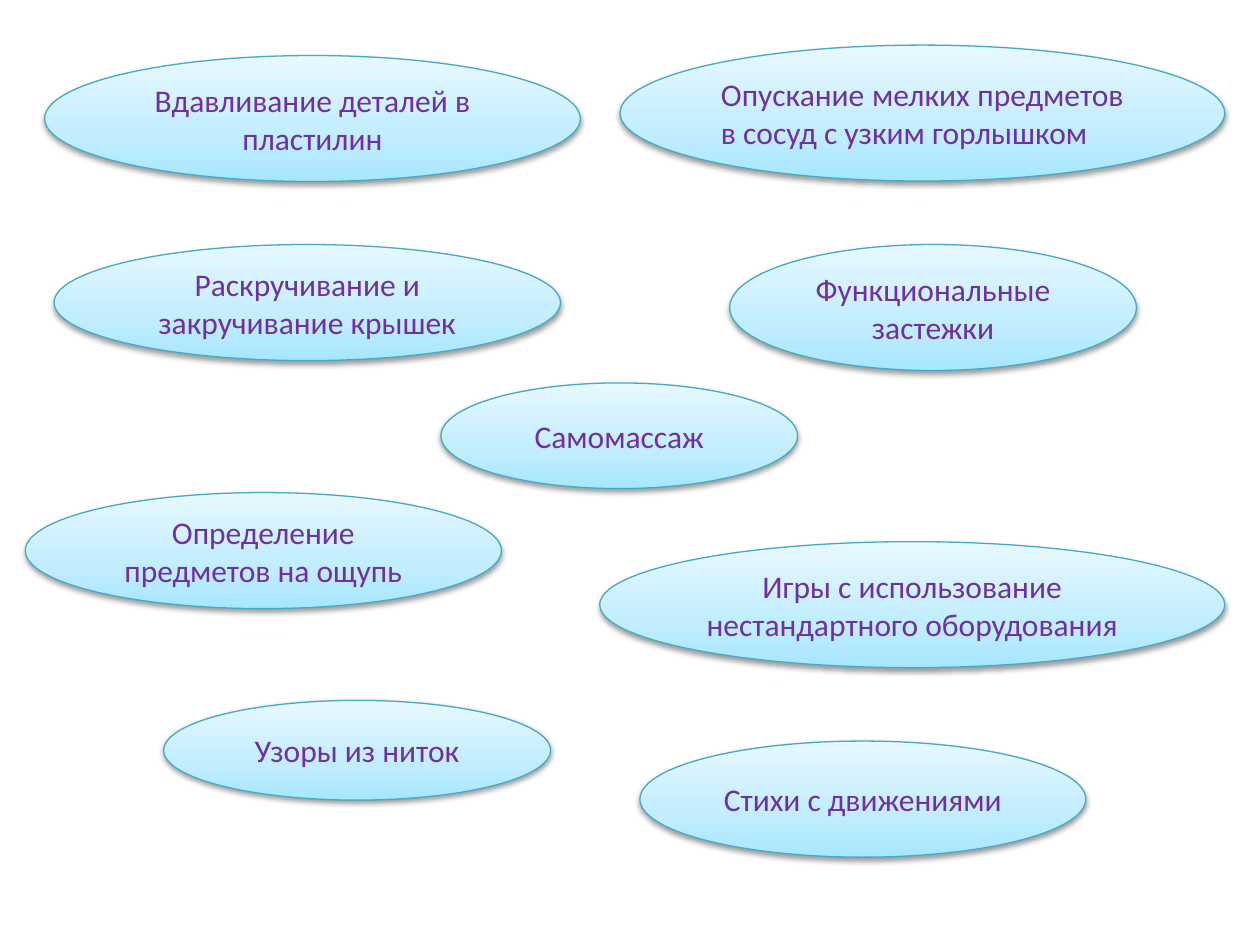
from lxml import etree
from pptx import Presentation
from pptx.dml.color import RGBColor
from pptx.enum.shapes import MSO_SHAPE
from pptx.enum.text import MSO_ANCHOR, PP_ALIGN
from pptx.oxml.ns import qn
from pptx.util import Cm, Pt

OVAL = MSO_SHAPE.OVAL
MIDDLE = MSO_ANCHOR.MIDDLE
CENTER, JUSTIFY = PP_ALIGN.CENTER, PP_ALIGN.JUSTIFY

COLORS = {"text": "7030A0", "line": "46AAC5", "shadow": "000000",
          "deep": "A7E6FF", "mid": "C1EDFF", "pale": "E7F8FF"}
GRADIENT = [(0, "deep"), (35, "mid"), (100, "pale")]

# Activity, box (left, top, width, height in cm), alignment
ACTIVITIES = [
    ("Вдавливание деталей в пластилин", (0.9, 1.12, 10.8, 2.54), CENTER),
    ("Опускание мелких предметов в сосуд с узким горлышком",
     (12.5, 0.91, 12.19, 2.74), JUSTIFY),
    ("Раскручивание и закручивание крышек", (1.09, 4.93, 10.21, 2.34), CENTER),
    ("Функциональные застежки", (14.71, 4.93, 8.2, 2.54), CENTER),
    ("Самомассаж", (8.89, 7.72, 7.19, 2.13), CENTER),
    ("Узоры из ниток", (3.3, 14.12, 7.8, 2.01), CENTER),
    ("Стихи с движениями", (12.9, 14.94, 8.99, 2.34), CENTER),
    ("Определение предметов на ощупь", (0.51, 9.93, 9.6, 2.34), CENTER),
    ("Игры с использование нестандартного оборудования",
     (12.09, 10.92, 12.6, 2.54), CENTER),
]


def rgb(name):
    return RGBColor.from_string(COLORS[name])


def add_color(parent, name):
    return etree.SubElement(parent, qn("a:srgbClr"), val=COLORS[name])


def fill_gradient(s):
    """Three-stop gradient running from the bottom upwards."""
    s.fill.gradient()
    s.fill.gradient_angle = 90
    stops = s.element.spPr.find(".//" + qn("a:gsLst"))
    for stop in list(stops):
        stops.remove(stop)
    for percent, name in GRADIENT:
        add_color(etree.SubElement(stops, qn("a:gs"), pos=str(percent * 1000)), name)


def add_shadow(s):
    """Soft shadow falling straight down."""
    s.shadow.inherit = False
    effects = s.element.spPr.find(qn("a:effectLst"))
    shadow = etree.SubElement(effects, qn("a:outerShdw"), blurRad="40000",
                              dist="20000", dir="5400000", rotWithShape="0")
    etree.SubElement(add_color(shadow, "shadow"), qn("a:alpha"), val="38000")


def add_activity(slide, text, box, align):
    s = slide.shapes.add_shape(OVAL, *map(Cm, box))
    fill_gradient(s)
    s.line.color.rgb = rgb("line")
    s.line.width = Pt(0.75)
    add_shadow(s)

    # Label
    tf = s.text_frame
    tf.word_wrap = True
    tf.vertical_anchor = MIDDLE
    p = tf.paragraphs[0]
    p.text = text
    p.alignment = align
    p.font.name = "Calibri"
    p.font.size = Pt(18)
    p.font.color.rgb = rgb("text")


def main():
    prs = Presentation()
    prs.slide_width, prs.slide_height = Cm(25.4), Cm(19.05)
    slide = prs.slides.add_slide(prs.slide_layouts[6])
    for text, box, align in ACTIVITIES:
        add_activity(slide, text, box, align)
    prs.save("out.pptx")


if __name__ == "__main__":
    main()
